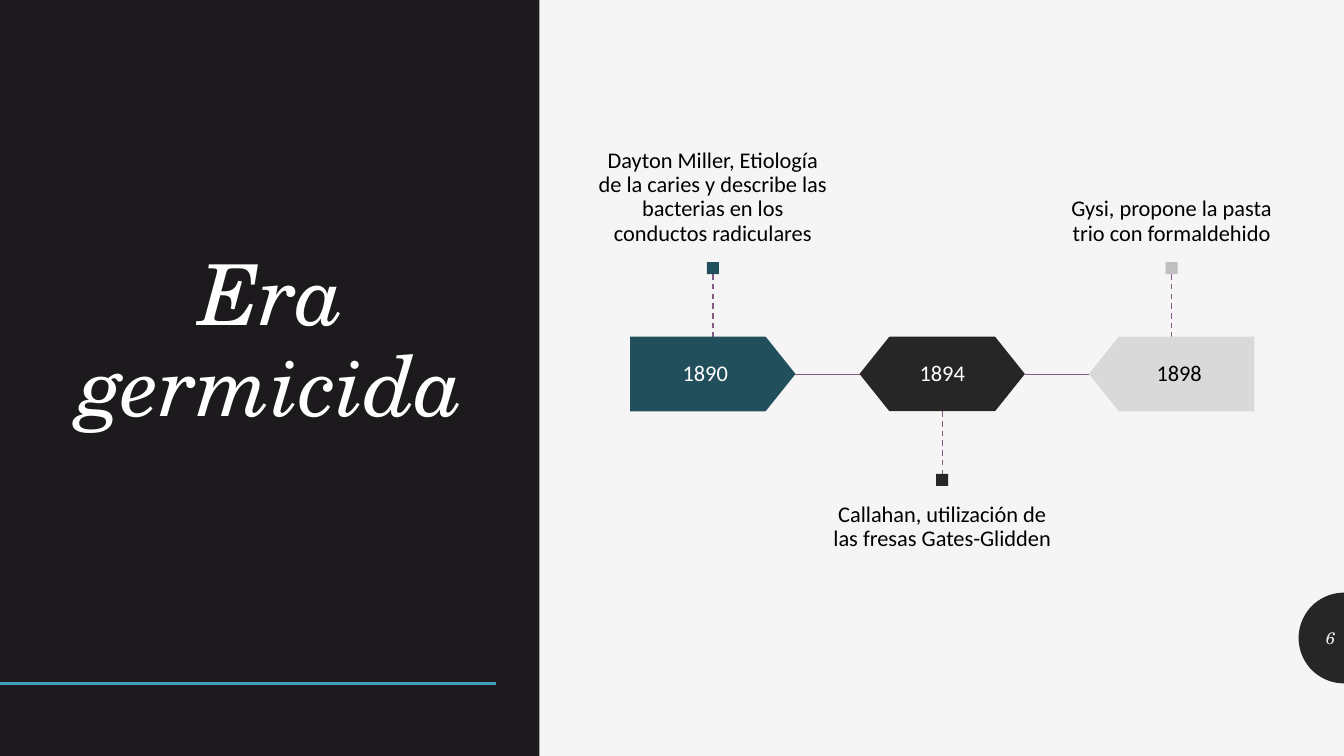
from math import cos, pi, sin
from pptx import Presentation
from pptx.dml.color import RGBColor
from pptx.enum.dml import MSO_LINE as Dash
from pptx.enum.shapes import MSO_CONNECTOR as Conn, MSO_SHAPE as Kind
from pptx.enum.text import MSO_ANCHOR as Anchor, MSO_AUTO_SIZE as Auto, PP_ALIGN as Align
from pptx.oxml.ns import qn
from pptx.util import Inches, Pt
from lxml.etree import SubElement

PAPER = RGBColor(0xF5, 0xF5, 0xF5)
PANEL = RGBColor(0x1D, 0x1A, 0x1D)
RULE = RGBColor(0x43, 0x9E, 0xB7)
TEAL = RGBColor(0x22, 0x4F, 0x5C)
DARK = RGBColor(0x26, 0x26, 0x26)
LIGHT = RGBColor(0xD9, 0xD9, 0xD9)
GREY = RGBColor(0xBF, 0xBF, 0xBF)
PLUM = RGBColor(0x83, 0x5B, 0x82)
WHITE = RGBColor(0xFF, 0xFF, 0xFF)
BLACK = RGBColor(0, 0, 0)
SERIF = "TeX Gyre Schola"

prs = Presentation()
prs.slide_width = Inches(13.33)
prs.slide_height = Inches(7.5)
slide = prs.slides.add_slide(prs.slide_layouts[5])
slide.background.fill.solid()
slide.background.fill.fore_color.rgb = PAPER
shapes = slide.shapes


def add_line(x1, y1, x2, y2, color, width):
    line = shapes.add_connector(Conn.STRAIGHT, Inches(x1), Inches(y1), Inches(x2), Inches(y2))
    line.line.color.rgb = color
    line.line.width = Pt(width)
    SubElement(line._element.spPr, qn("a:effectLst"))
    return line


def set_text(box, text, size, color, font, anchor, align, inset=(0.1, 0.05), space=0.9):
    frame = box.text_frame
    frame.word_wrap = True
    frame.auto_size = Auto.NONE
    frame.vertical_anchor = anchor
    frame.margin_left = frame.margin_right = Inches(inset[0])
    frame.margin_top = frame.margin_bottom = Inches(inset[1])
    para = frame.paragraphs[0]
    para.alignment = align
    para.line_spacing = space
    run = para.add_run()
    run.text = text
    run.font.size = Pt(size)
    run.font.name = font
    run.font.color.rgb = color
    run.font.italic = font == SERIF


arc = [pi / 2 + pi * i / 40 for i in range(41)]
points = [(Inches(13.33 + 0.45 * cos(a)), Inches(6.33 + 0.45 * sin(a))) for a in arc]
pen = shapes.build_freeform(*points[0])
pen.add_line_segments(points[1:], close=True)
badge = pen.convert_to_shape()
panel = shapes.add_shape(Kind.RECTANGLE, 0, 0, Inches(5.35), Inches(7.5))
for part, color in ((badge, DARK), (panel, PANEL)):
    part.shadow.inherit = False
    part.fill.solid()
    part.fill.fore_color.rgb = color
    part.line.fill.background()
add_line(0, 6.78, 4.92, 6.78, RULE, 2)

title = shapes.title
title.left, title.top, title.width, title.height = map(Inches, (0.6, 1.93, 4.19, 2.43))
set_text(title, "Era germicida", 60, WHITE, SERIF, Anchor.BOTTOM, Align.CENTER)
shapes._spTree.append(title._element)

LEFT, STEP, WIDE, TOP, HIGH, DOT = 6.25, 2.275, 1.64, 3.34, 0.74, 0.12
events = [
    ("1890", "Dayton Miller, Etiología de la caries y describe las bacterias en los conductos radiculares",
     Kind.PENTAGON, TEAL, TEAL, WHITE, 0, 1.49),
    ("1894", "Callahan, utilización de las fresas Gates-Glidden",
     Kind.HEXAGON, DARK, DARK, WHITE, 0, WIDE),
    ("1898", "Gysi, propone la pasta trio con formaldehido",
     Kind.PENTAGON, LIGHT, GREY, BLACK, 0.15, 1.49),
]
for i, (year, note, kind, fill, tint, ink, shift, span) in enumerate(events):
    x = LEFT + i * STEP
    mid = x + WIDE / 2
    above = i % 2 == 0
    if i:
        add_line(x - STEP + WIDE, 3.71, x, 3.71, PLUM, 0.5)
    start, end, dot, top = (2.72, TOP, 2.6, 0.62) if above else (TOP + HIGH, 4.7, 4.7, 4.83)
    add_line(mid, start, mid, end, PLUM, 1).line.dash_style = Dash.DASH

    block = shapes.add_shape(kind, Inches(x), Inches(TOP), Inches(WIDE), Inches(HIGH))
    block.adjustments[0] = 0.4
    block.rotation = 180 if i == 2 else 0
    mark = shapes.add_shape(Kind.RECTANGLE, Inches(mid - DOT / 2), Inches(dot), Inches(DOT), Inches(DOT))
    for part, color in ((block, fill), (mark, tint)):
        part.shadow.inherit = False
        part.fill.solid()
        part.fill.fore_color.rgb = color
        part.line.fill.background()

    label = shapes.add_textbox(Inches(x + shift), Inches(TOP), Inches(span), Inches(HIGH))
    set_text(label, year, 16, ink, "Calibri", Anchor.MIDDLE, Align.CENTER, (0.13, 0.13))
    text = shapes.add_textbox(Inches(mid - 1.14), Inches(top), Inches(2.28), Inches(1.98))
    side = Anchor.BOTTOM if above else Anchor.TOP
    set_text(text, note, 16, BLACK, "Calibri", side, Align.CENTER, (0, 0.16))

number = shapes.add_textbox(Inches(12.89), Inches(6.13), Inches(0.45), Inches(0.4))
set_text(number, "6", 12, PAPER, SERIF, Anchor.MIDDLE, Align.RIGHT, space=1.0)

prs.save("out.pptx")
